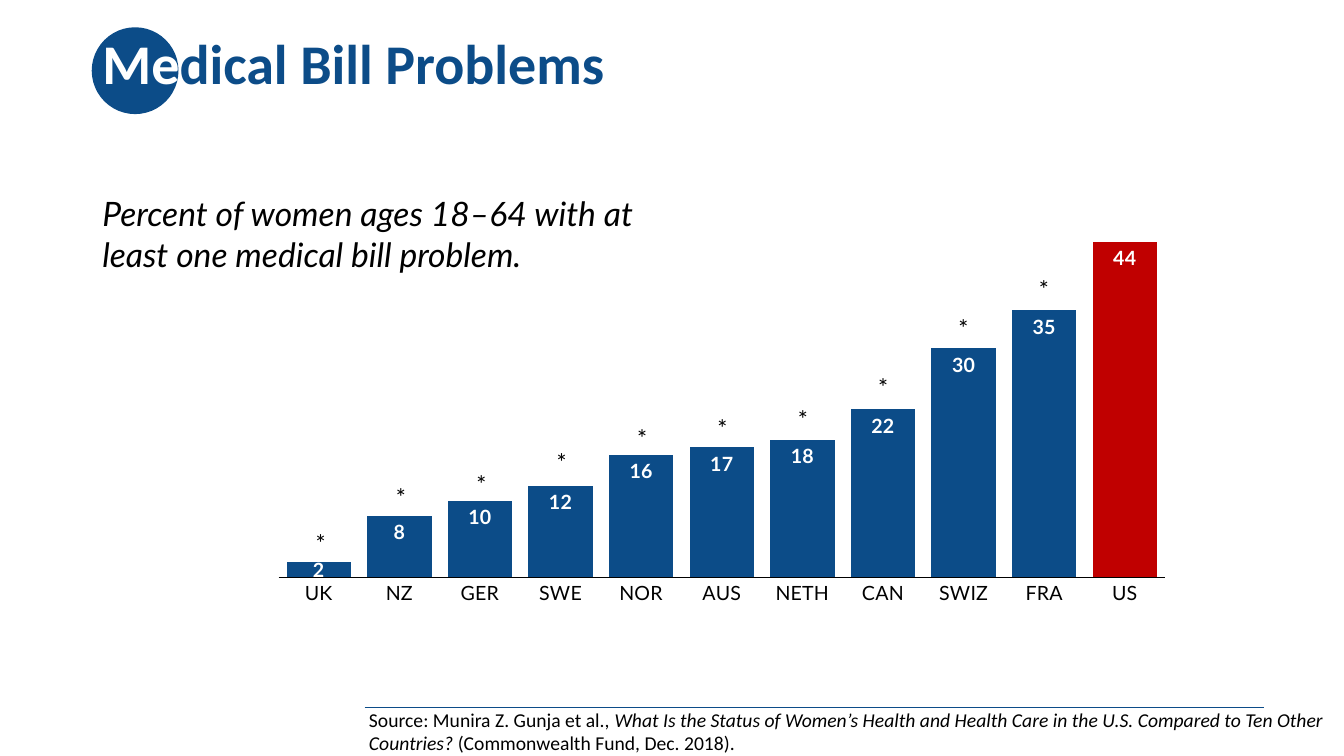
"""Build the slide on medical bill problems."""
from lxml.etree import SubElement
from pptx import Presentation
from pptx.chart.data import CategoryChartData
from pptx.dml.color import RGBColor
from pptx.enum.chart import XL_CHART_TYPE, XL_LABEL_POSITION, XL_TICK_MARK
from pptx.enum.shapes import MSO_CONNECTOR, MSO_SHAPE
from pptx.enum.text import MSO_ANCHOR, MSO_AUTO_SIZE, PP_ALIGN
from pptx.oxml.ns import qn
from pptx.util import Pt

BLUE = RGBColor(0x0C, 0x4C, 0x88)
RED = RGBColor(0xC0, 0x00, 0x00)
BLACK = RGBColor(0x00, 0x00, 0x00)
WHITE = RGBColor(0xFF, 0xFF, 0xFF)

LANDS = ["UK", "NZ", "GER", "SWE", "NOR", "AUS", "NETH", "CAN", "SWIZ", "FRA", "US"]
RATES = [2, 8, 10, 12, 16, 17, 18, 22, 30, 35, 44]
STAR_TOPS = [373, 340, 331, 315.5, 298, 291, 284.5, 262, 219.5, 192]
STAR_LEFT, STAR_STEP = 217.5, 57.4
PLOT = {"x": 0.038, "y": 0.178, "w": 0.946, "h": 0.729}


def style(font, size=14, color=BLACK, bold=False, italic=False, face="Calibri"):
    """Set the look of a font."""
    font.name, font.size = face, Pt(size)
    font.bold, font.italic = bold, italic
    font.color.rgb = color


def write(par, text, **look):
    """Add a run of text with its format to a paragraph."""
    run = par.add_run()
    run.text = text
    style(run.font, **look)


class Deck:
    """Hold the deck and its current slide."""

    def __init__(self):
        """Start a wide deck with one titled slide."""
        self.file = Presentation()
        self.file.slide_width, self.file.slide_height = Pt(960), Pt(540)
        self.slide = self.file.slides.add_slide(self.file.slide_layouts[5])
        self.shapes = self.slide.shapes

    def title(self, box, parts):
        """Fill and place the title."""
        title = self.shapes.title
        title.left, title.top, title.width, title.height = map(Pt, box)
        frame = title.text_frame
        frame.vertical_anchor = MSO_ANCHOR.TOP
        frame.auto_size = MSO_AUTO_SIZE.NONE
        par = frame.paragraphs[0]
        par.alignment = PP_ALIGN.LEFT
        for text, color in parts:
            write(par, text, size=40, color=color, bold=True)

    def disc(self, left, top, size):
        """Draw a blue disc behind the title."""
        disc = self.shapes.add_shape(MSO_SHAPE.OVAL, Pt(left), Pt(top), Pt(size), Pt(size))
        disc.shadow.inherit = False
        disc.fill.solid()
        disc.fill.fore_color.rgb = BLUE
        disc.line.fill.background()
        self.shapes.title.element.addprevious(disc.element)

    def rule(self, left, right, top):
        """Draw a thin level line."""
        rule = self.shapes.add_connector(MSO_CONNECTOR.STRAIGHT, Pt(left), Pt(top), Pt(right), Pt(top))
        rule.line.color.rgb = BLUE
        rule.line.width = Pt(0.5)
        SubElement(rule.element.spPr, qn("a:effectLst"))

    def text(self, box, parts, align=PP_ALIGN.LEFT):
        """Add a text box made of text and format pairs."""
        frame = self.shapes.add_textbox(*map(Pt, box)).text_frame
        frame.word_wrap = True
        frame.auto_size = MSO_AUTO_SIZE.SHAPE_TO_FIT_TEXT
        par = frame.paragraphs[0]
        par.alignment = align
        for text, look in parts:
            write(par, text, **look)

    def chart(self, box):
        """Add the column chart of rates by land."""
        data = CategoryChartData(number_format="0")
        data.categories = LANDS
        data.add_series("Series 1", RATES)
        chart = self.shapes.add_chart(XL_CHART_TYPE.COLUMN_CLUSTERED, *map(Pt, box), data).chart
        chart.has_legend = chart.has_title = False
        style(chart.font, size=18)
        self.axes(chart)
        self.bars(chart.plots[0])
        self.frame(chart)

    def axes(self, chart):
        """Format the land axis and hide the value axis."""
        base = chart.category_axis
        base.major_tick_mark = base.minor_tick_mark = XL_TICK_MARK.NONE
        base.format.line.color.rgb = BLACK
        base.format.line.width = Pt(0.75)
        style(base.tick_labels.font, face="Lato")
        side = chart.value_axis
        side.minimum_scale, side.maximum_scale, side.major_unit = 0, 50, 25
        side.has_major_gridlines = False
        side.visible = False

    def bars(self, plot):
        """Colour and label the bars, centring the label of the shortest."""
        plot.gap_width = 25
        plot.vary_by_categories = False
        row = plot.series[0]
        row.invert_if_negative = False
        for part, color in ((row, BLUE), (row.points[len(RATES) - 1], RED)):
            part.format.fill.solid()
            part.format.fill.fore_color.rgb = color
        tags = row.data_labels
        tags.show_value = True
        tags.number_format, tags.number_format_is_linked = "0", False
        short = row.points[0].data_label
        for tag, spot in ((tags, XL_LABEL_POSITION.INSIDE_END), (short, XL_LABEL_POSITION.CENTER)):
            style(tag.font, color=WHITE, bold=True, face="Lato")
            tag.position = spot

    def frame(self, chart):
        """Fix the inner plot area within the chart."""
        area = chart.element.xpath("c:chart/c:plotArea")[0]
        for old in area.findall(qn("c:layout")):
            area.remove(old)
        layout = SubElement(area, qn("c:layout"))
        area.insert(0, layout)
        spot = SubElement(layout, qn("c:manualLayout"))
        marks = {"layoutTarget": "inner", "xMode": "edge", "yMode": "edge", **PLOT}
        for name, value in marks.items():
            SubElement(spot, qn("c:" + name)).set("val", str(value))


def main():
    """Build and save the slide."""
    deck = Deck()
    deck.title((66, 17, 828, 104.5), [("Me", WHITE), ("dical Bill Problems", BLUE)])
    deck.disc(65.5, 19.5, 62)
    deck.rule(260.5, 903, 505)
    deck.chart((173.5, 73.5, 669.5, 373.5))
    for spot, top in enumerate(STAR_TOPS):
        box = (STAR_LEFT + spot * STAR_STEP, top, 22.5, 41)
        deck.text(box, [("*", {"size": 18})], PP_ALIGN.CENTER)
    deck.text((256.5, 502, 703.5, 41), [
        ("Source: Munira Z. Gunja et al., ", {}),
        ("What Is the Status of Women’s Health and Health Care in the U.S. "
         "Compared to Ten Other Countries? ", {"italic": True}),
        ("(Commonwealth Fund, Dec. 2018).", {}),
    ])
    deck.text((66, 134.5, 420, 65.5), [
        ("Percent of women ages 18–64 with at least one medical bill problem.",
         {"size": 24, "italic": True, "face": "Lato"}),
    ])
    deck.file.save("out.pptx")


if __name__ == "__main__":
    main()
